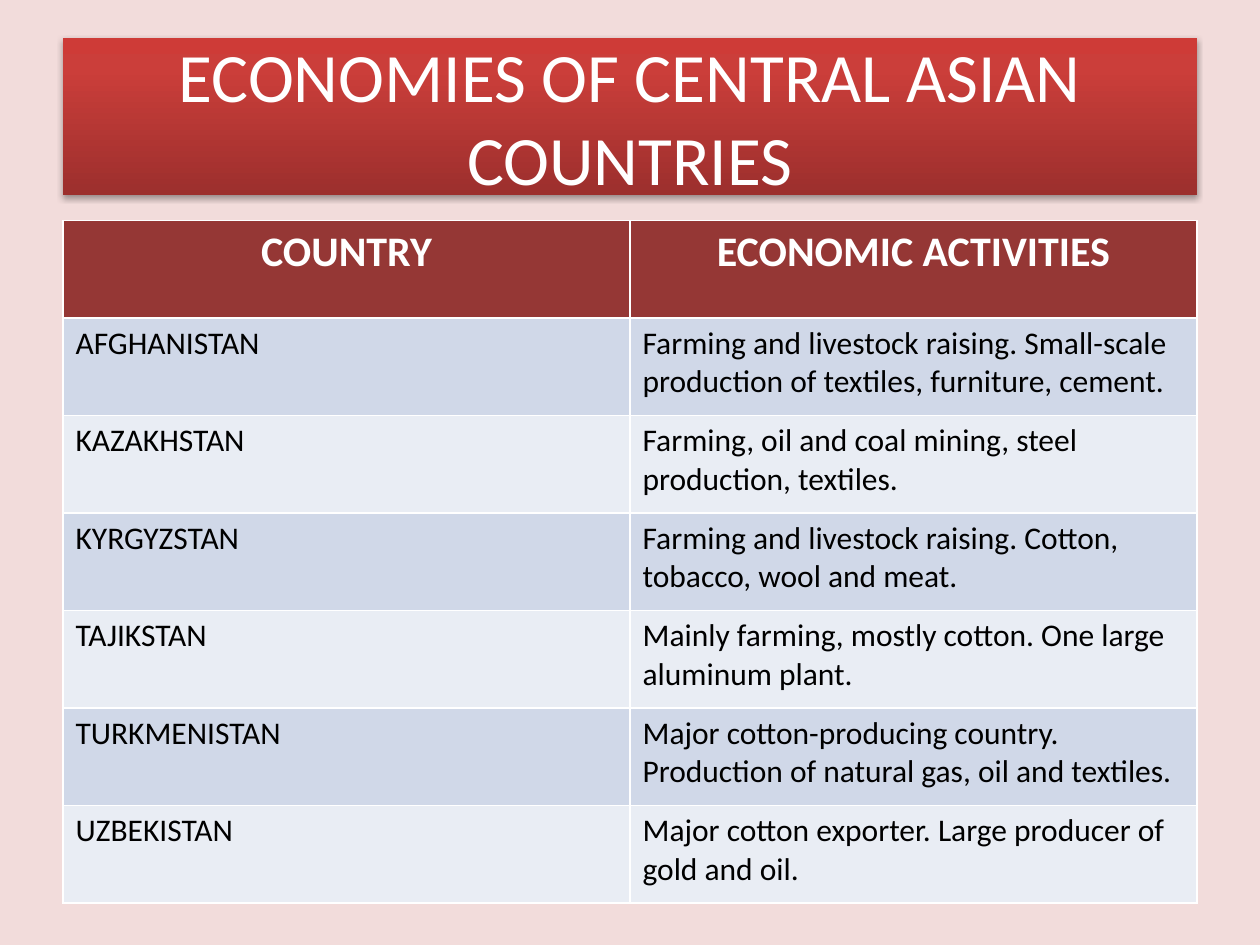
import copy

import pptx
import pptx.dml.color
import pptx.enum.shapes
import pptx.enum.text
import pptx.oxml
import pptx.oxml.ns
import pptx.util

W, H = 10, 7.5
FONT = "Calibri"
CENTER = pptx.enum.text.PP_ALIGN.CENTER
LEFT = pptx.enum.text.PP_ALIGN.LEFT
TITLE = {"size": pptx.util.Pt(39.6), "bold": False, "name": FONT}
HEADER = {"size": pptx.util.Pt(24), "bold": True, "name": FONT}
BODY = {"size": pptx.util.Pt(18), "bold": False, "name": FONT}
ROWS = [
    ("COUNTRY", "ECONOMIC ACTIVITIES"),
    ("AFGHANISTAN", "Farming and livestock raising. Small-scale production of textiles, furniture, cement."),
    ("KAZAKHSTAN", "Farming, oil and coal mining, steel production, textiles."),
    ("KYRGYZSTAN", "Farming and livestock raising. Cotton, tobacco, wool and meat."),
    ("TAJIKSTAN", "Mainly farming, mostly cotton. One large aluminum plant."),
    ("TURKMENISTAN", "Major cotton-producing country. Production of natural gas, oil and textiles."),
    ("UZBEKISTAN", "Major cotton exporter. Large producer of gold and oil."),
]


def rgb(value):
    return pptx.dml.color.RGBColor.from_string(value)


def inches(box):
    return [pptx.util.Inches(v) for v in box]


def write(tf, text, style, color, align):
    p = tf.paragraphs[0]
    p.alignment = align
    r = p.add_run()
    r.text = text
    for key, value in style.items():
        setattr(r.font, key, value)
    r.font.color.rgb = rgb(color)


def fill_gradient(sp, stops, angle):
    sp.fill.gradient()
    sp.fill.gradient_angle = angle
    gs_list = sp.fill.gradient_stops
    gs = sp._element.spPr.find(".//" + pptx.oxml.ns.qn("a:gs"))
    gs.addnext(copy.deepcopy(gs))
    gs_list = sp.fill.gradient_stops
    for stop, (position, color) in zip(gs_list, stops):
        stop.position = position
        stop.color.rgb = rgb(color)


def add_shadow(sp):
    sp.shadow.inherit = False
    effects = sp._element.spPr.find(pptx.oxml.ns.qn("a:effectLst"))
    effects.append(pptx.oxml.parse_xml(
        f'<a:outerShdw {pptx.oxml.ns.nsdecls("a")} blurRad="{pptx.util.Pt(3.1)}" '
        f'dist="{pptx.util.Pt(1.8)}" dir="5400000" rotWithShape="0">'
        '<a:srgbClr val="000000"><a:alpha val="35000"/></a:srgbClr></a:outerShdw>'))


def title_banner(s, box, text):
    sp = s.shapes.add_shape(pptx.enum.shapes.MSO_SHAPE.RECTANGLE, *inches(box))
    fill_gradient(sp, [(0, "9C2F2D"), (0.8, "CB3E3A"), (1, "CE3B37")], 90)
    sp.line.fill.background()
    add_shadow(sp)
    tf = sp.text_frame
    tf.word_wrap = True
    tf.vertical_anchor = pptx.enum.text.MSO_ANCHOR.MIDDLE
    write(tf, text, TITLE, "FFFFFF", CENTER)


def economy_table(s, box, rows):
    table = s.shapes.add_table(len(rows), len(rows[0]), *inches(box)).table
    for i, row in enumerate(rows):
        if i == 0:
            fill, style, color, align = "953735", HEADER, "FFFFFF", CENTER
        else:
            fill = "D0D8E8" if i % 2 else "E9EDF4"
            style, color, align = BODY, "000000", LEFT
        for j, text in enumerate(row):
            cell = table.cell(i, j)
            cell.fill.solid()
            cell.fill.fore_color.rgb = rgb(fill)
            write(cell.text_frame, text, style, color, align)


def main():
    prs = pptx.Presentation()
    prs.slide_width, prs.slide_height = inches((W, H))
    s = prs.slides.add_slide(prs.slide_layouts[6])
    s.background.fill.solid()
    s.background.fill.fore_color.rgb = rgb("F2DCDB")
    margin = 0.05 * W
    width = W - 2 * margin
    title_banner(s, (margin, 0.04 * H, width, H / 6), "ECONOMIES OF CENTRAL ASIAN COUNTRIES")
    economy_table(s, (margin, 1.75, width, 5.42), ROWS)
    prs.save("out.pptx")


if __name__ == "__main__":
    main()
